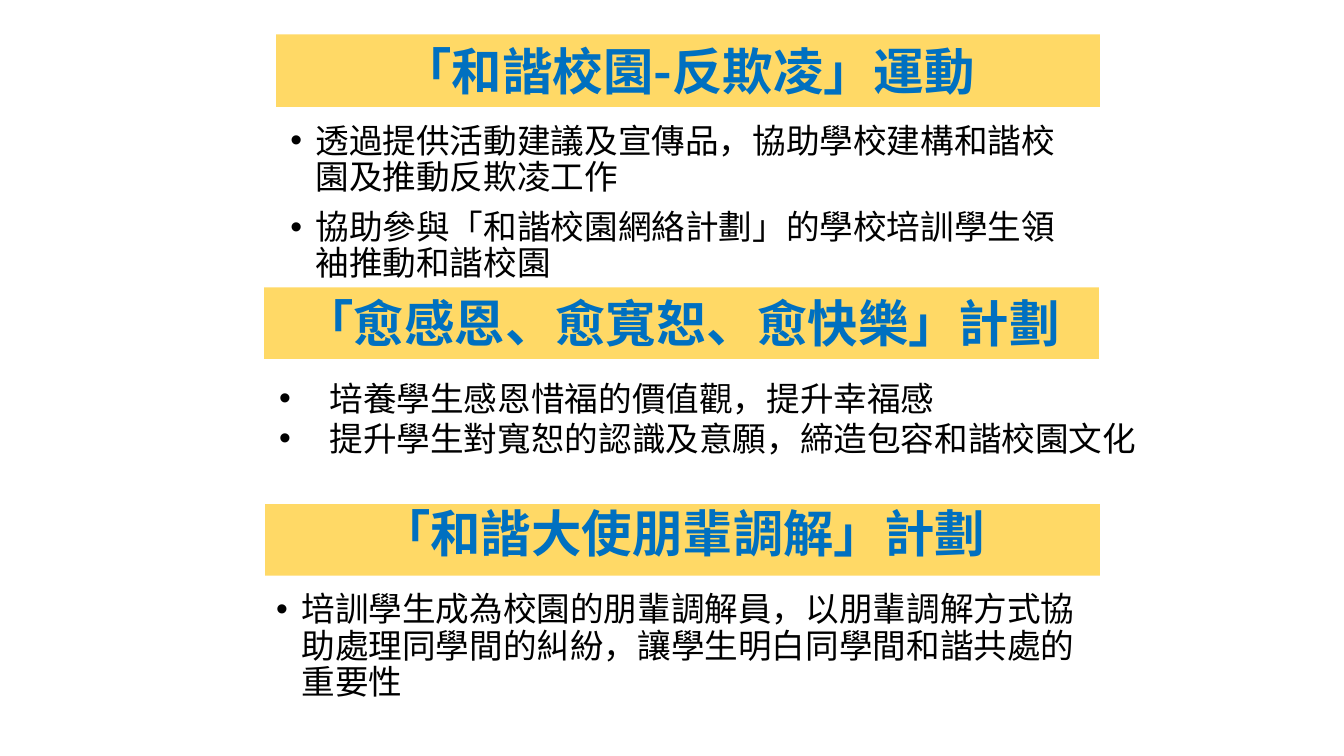
from dataclasses import dataclass

from lxml import etree
from pptx import Presentation
from pptx.dml.color import RGBColor
from pptx.enum.shapes import MSO_SHAPE
from pptx.enum.text import MSO_ANCHOR, MSO_AUTO_SIZE, PP_ALIGN
from pptx.oxml.ns import qn
from pptx.slide import Slide
from pptx.text.text import TextFrame
from pptx.util import Inches, Pt

RECT = MSO_SHAPE.RECTANGLE
TOP, MIDDLE = MSO_ANCHOR.TOP, MSO_ANCHOR.MIDDLE
LEFT, CENTER = PP_ALIGN.LEFT, PP_ALIGN.CENTER
GROW, FIXED = MSO_AUTO_SIZE.SHAPE_TO_FIT_TEXT, MSO_AUTO_SIZE.NONE

GOLD = RGBColor(0xFF, 0xD9, 0x66)
BLUE = RGBColor(0x00, 0x70, 0xC0)
BLACK = RGBColor(0x00, 0x00, 0x00)
FONT = "Noto Sans CJK TC"

Box = tuple[float, float, float, float]


@dataclass
class Band:
    box: Box
    text: str
    anchor: MSO_ANCHOR = TOP
    tight: bool = False
    grow: bool = False


@dataclass
class Points:
    box: Box
    lines: list[str]
    indent: float = 0.25
    tight: bool = True
    grow: bool = False


BANDS = [
    Band((2.74, 0.34, 8.17, 0.72), "「和諧校園-反欺凌」運動", anchor=MIDDLE),
    Band((2.62, 2.85, 8.28, 0.71), "「愈感恩、愈寬恕、愈快樂」計劃", grow=True),
    Band((2.63, 5, 8.28, 0.71), "「和諧大使朋輩調解」計劃", tight=True),
]

POINTS = [
    Points((2.81, 1.19, 8.03, 1.32), [
        "透過提供活動建議及宣傳品，協助學校建構和諧校園及推動反欺凌工作",
        "協助參與「和諧校園網絡計劃」的學校培訓學生領袖推動和諧校園",
    ]),
    Points((2.67, 3.7, 8.78, 0.91), [
        "培養學生感恩惜福的價值觀，提升幸福感",
        "提升學生對寬恕的認識及意願，締造包容和諧校園文化",
    ], indent=0.5, tight=False, grow=True),
    Points((2.67, 5.84, 8.17, 1.44), [
        "培訓學生成為校園的朋輩調解員，以朋輩調解方式協助處理同學間的糾紛，"
        "讓學生明白同學間和諧共處的重要性",
    ]),
]


def write(frame: TextFrame, lines: list[str], *, size: float, color: RGBColor,
          bold: bool = False, align: PP_ALIGN = LEFT, tight: bool = False,
          indent: float = 0) -> None:
    """Fill a frame with one paragraph per line."""
    for i, line in enumerate(lines):
        para = frame.add_paragraph() if i else frame.paragraphs[0]
        para.alignment = align
        if tight:
            para.line_spacing = 0.9
            para.space_before = Pt(10)
        if indent:
            props = para._p.get_or_add_pPr()
            props.set("marL", str(Inches(indent)))
            props.set("indent", str(Inches(-indent)))
            etree.SubElement(props, qn("a:buFont"), typeface="Arial")
            etree.SubElement(props, qn("a:buChar"), char="•")
        run = para.add_run()
        run.text = line
        font = run.font
        font.size, font.bold, font.name = Pt(size), bold, FONT
        font.color.rgb = color
        # East Asian glyphs take their own typeface
        etree.SubElement(run._r.get_or_add_rPr(), qn("a:ea"), typeface=FONT)


def draw_band(slide: Slide, band: Band) -> None:
    shape = slide.shapes.add_shape(RECT, *map(Inches, band.box))
    shape.shadow.inherit = False
    shape.fill.solid()
    shape.fill.fore_color.rgb = GOLD
    shape.line.fill.background()
    frame = shape.text_frame
    frame.word_wrap = True
    frame.vertical_anchor = band.anchor
    frame.auto_size = GROW if band.grow else FIXED
    write(frame, [band.text], size=36, color=BLUE, bold=True,
          align=CENTER, tight=band.tight)


def draw_points(slide: Slide, item: Points) -> None:
    frame = slide.shapes.add_textbox(*map(Inches, item.box)).text_frame
    frame.word_wrap = not item.grow
    frame.auto_size = GROW if item.grow else FIXED
    if not item.grow:
        frame.margin_left = frame.margin_right = Inches(0.07)
        frame.margin_top = frame.margin_bottom = Inches(0.04)
    write(frame, item.lines, size=24, color=BLACK,
          tight=item.tight, indent=item.indent)


def main() -> None:
    deck = Presentation()
    deck.slide_width, deck.slide_height = Inches(13.33), Inches(7.5)
    slide = deck.slides.add_slide(deck.slide_layouts[6])
    # Each heading band is followed by its bullet points
    for band, item in zip(BANDS, POINTS):
        draw_band(slide, band)
        draw_points(slide, item)
    deck.save("out.pptx")


if __name__ == "__main__":
    main()
